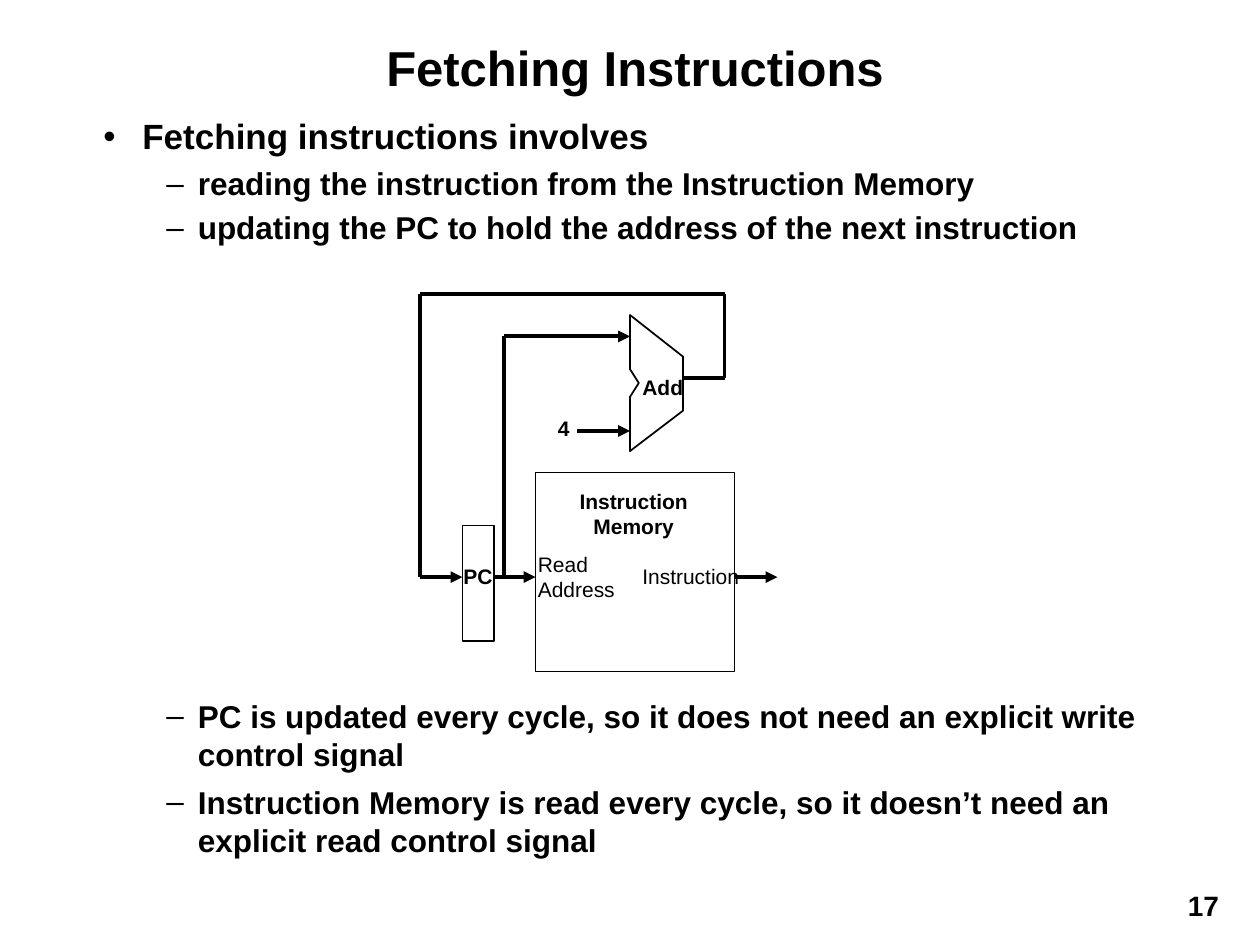
from lxml import etree
from pptx import Presentation
from pptx import util as u
from pptx.dml.color import RGBColor
from pptx.enum import shapes, text
from pptx.oxml.ns import qn

BLACK = "000000"
THIN, WIRE = 1, 2.25
# level: (bullet, left margin, hanging indent, size, space before)
LEVELS = {0: ("•", 0.31, 0.31, 20, 7), 1: ("–", 0.75, 0.25, 18, 6)}


def color(value):
    return RGBColor.from_string(value)


def set_all(target, values):
    for name, value in values.items():
        setattr(target, name, value)


def add_text(slide, box, lines, size, bold=True, align="LEFT", wrap=False,
             insets=(0.1, 0.05), anchor="TOP"):
    label = slide.shapes.add_textbox(*map(u.Inches, box))
    frame = label.text_frame
    side, end = map(u.Inches, insets)
    set_all(frame, {
        "word_wrap": wrap, "vertical_anchor": getattr(text.MSO_ANCHOR, anchor),
        "margin_left": side, "margin_right": side,
        "margin_top": end, "margin_bottom": end})
    frame.text = "\n".join(lines)
    for paragraph in frame.paragraphs:
        paragraph.alignment = getattr(text.PP_ALIGN, align)
        font = paragraph.runs[0].font
        set_all(font, {"name": "Arial", "size": u.Pt(size), "bold": bold})
        font.color.rgb = color(BLACK)
    return frame


def title(slide, box, wording):
    frame = add_text(slide, box, [wording], 28, align="CENTER", wrap=True,
                     insets=(0.07, 0.03), anchor="MIDDLE")
    frame.paragraphs[0].line_spacing = 0.9


def bullet_list(slide, box, items, line_spacing):
    frame = add_text(slide, box, [wording for _, wording in items], 18,
                     wrap=True, insets=(0.07, 0.03))
    for index, (paragraph, (level, _)) in enumerate(zip(frame.paragraphs, items)):
        mark, margin, hanging, size, before = LEVELS[level]
        set_all(paragraph, {
            "level": level, "line_spacing": line_spacing,
            "space_before": u.Pt(before if index else 0)})
        paragraph.runs[0].font.size = u.Pt(size)
        props = paragraph._p.get_or_add_pPr()
        props.set("marL", str(u.Inches(margin)))
        props.set("indent", str(-u.Inches(hanging)))
        etree.SubElement(props, qn("a:buFont")).set("typeface", "Arial")
        etree.SubElement(props, qn("a:buChar")).set("char", mark)


def outline(shape):
    shape.shadow.inherit = False
    shape.fill.background()
    shape.line.color.rgb = color(BLACK)
    shape.line.width = u.Pt(THIN)


def wire(slide, start, end, arrow=False):
    line = slide.shapes.add_connector(
        shapes.MSO_CONNECTOR.STRAIGHT, *map(u.Inches, (*start, *end)))
    line.line.color.rgb = color(BLACK)
    line.line.width = u.Pt(WIRE)
    if arrow:
        etree.SubElement(line.line._get_or_add_ln(), qn("a:tailEnd")).set("type", "triangle")
    etree.SubElement(line._element.spPr, qn("a:effectLst"))


def route(slide, points, arrow=False):
    """Chain of wires through the points, with the arrow on the last one."""
    legs = list(zip(points, points[1:]))
    for index, (start, end) in enumerate(legs, 1):
        wire(slide, start, end, arrow and index == len(legs))


def fetch_datapath(slide, box):
    left, top, width, height = box

    def at(x, y):
        return left + x, top + y

    # Adder
    notch = [(0, 0), (0.42, 0.33), (0.42, 0.76), (0, 1.08),
             (0, 0.65), (0.07, 0.54), (0, 0.43)]
    corners = [tuple(map(u.Inches, at(1.67 + x, 0.17 + y))) for x, y in notch]
    builder = slide.shapes.build_freeform(*corners[0], scale=1.0)
    builder.add_line_segments(corners[1:], close=True)
    outline(builder.convert_to_shape())

    # Instruction memory and PC register
    for x, y, w, h in ((0.92, 1.42, 1.58, 1.58), (0.34, 1.84, 0.25, 0.92)):
        outline(slide.shapes.add_shape(
            shapes.MSO_SHAPE.RECTANGLE, *map(u.Inches, (*at(x, y), w, h))))

    # Wires
    bus = 2.25
    sum_x = 2.42
    route(slide, [at(2.09, 0.67), at(sum_x, 0.67), at(sum_x, 0), at(0, 0),
                  at(0, bus), at(0.34, bus)], arrow=True)
    route(slide, [at(0.67, bus), at(0.67, 0.34), at(1.67, 0.34)], arrow=True)
    for start, end in ((at(0.59, bus), at(0.92, bus)),
                       (at(2.5, bus), at(width, bus)),
                       (at(1.25, 1.09), at(1.67, 1.09))):
        wire(slide, start, end, arrow=True)

    # Labels
    for x, y, w, h, lines, bold, align in (
            (0.84, 2, 0.81, 0.5, ["Read", "Address"], False, "LEFT"),
            (1.67, 2.09, 0.97, 0.3, ["Instruction"], False, "LEFT"),
            (1.17, 1.5, 1.06, 0.5, ["Instruction", "Memory"], True, "CENTER"),
            (1.67, 0.59, 0.53, 0.3, ["Add"], True, "LEFT"),
            (0.25, 2.09, 0.43, 0.3, ["PC"], True, "LEFT"),
            (1, 0.92, 0.29, 0.3, ["4"], True, "LEFT")):
        add_text(slide, (*at(x, y), w, h), lines, 12, bold, align)


def main():
    deck = Presentation()
    set_all(deck, {"slide_width": u.Inches(10), "slide_height": u.Inches(7.5)})
    slide = deck.slides.add_slide(deck.slide_layouts[6])

    title(slide, (0.58, 0.33, 8.92, 0.46), "Fetching Instructions")
    bullet_list(slide, (0.75, 0.92, 8.58, 1.25), [
        (0, "Fetching instructions involves"),
        (1, "reading the instruction from the Instruction Memory"),
        (1, "updating the PC to hold the address of the next instruction")], 0.9)
    fetch_datapath(slide, (3.33, 2.33, 2.84, 3))
    bullet_list(slide, (0.75, 5.5, 8.58, 1.52), [
        (1, "PC is updated every cycle, so it does not need an explicit write control signal"),
        (1, "Instruction Memory is read every cycle, so it doesn’t need an explicit read control signal"),
    ], 1.0)
    # Page number
    add_text(slide, (9.33, 7, 0.47, 0.36), ["17"], 16)
    deck.save("out.pptx")


if __name__ == "__main__":
    main()
